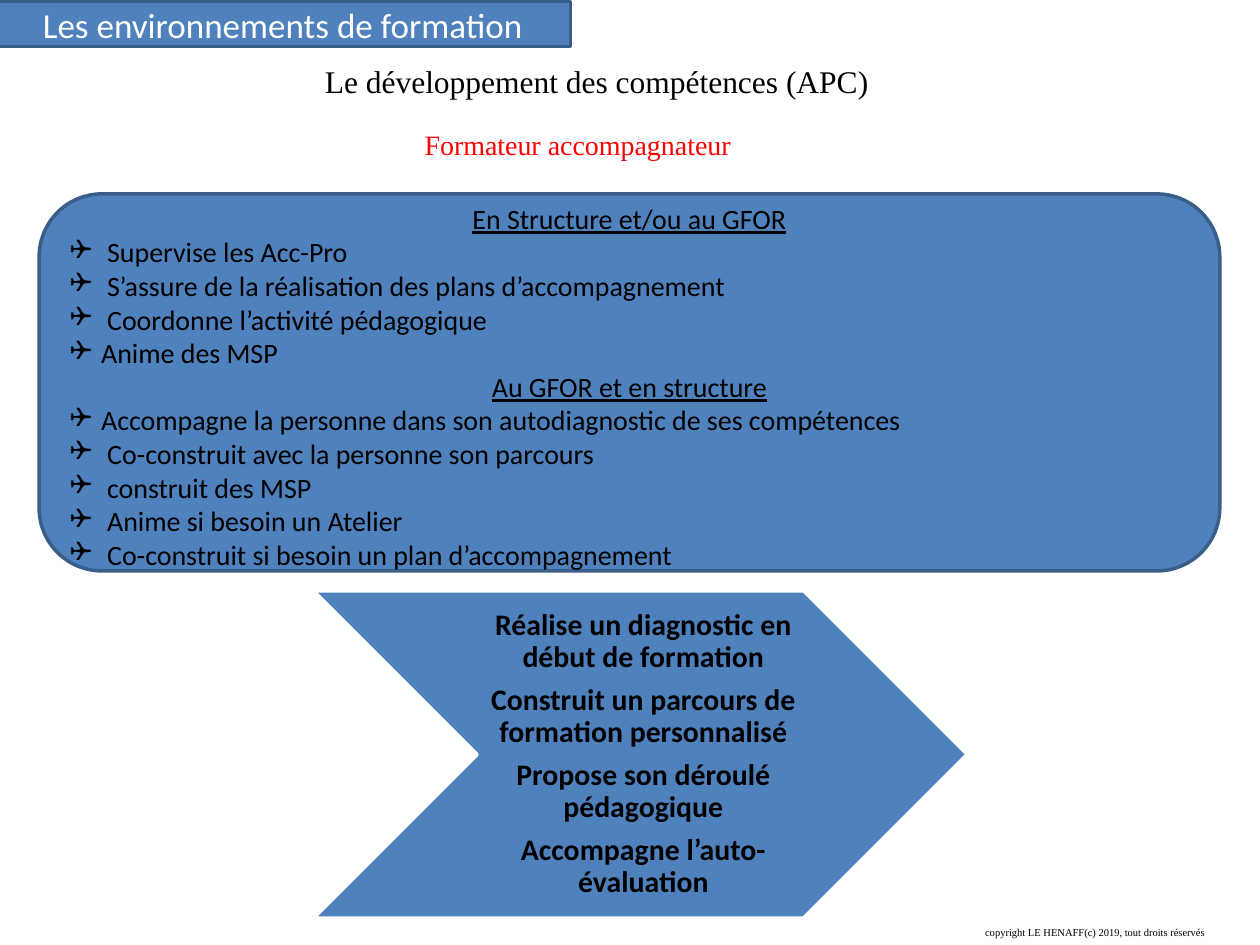
from dataclasses import dataclass

from lxml import etree
from pptx import Presentation
from pptx.dml.color import RGBColor
from pptx.enum.shapes import MSO_SHAPE
from pptx.enum.text import MSO_ANCHOR, PP_ALIGN
from pptx.oxml.ns import qn
from pptx.util import Cm, Pt

RECTANGLE = MSO_SHAPE.RECTANGLE
ROUNDED = MSO_SHAPE.ROUNDED_RECTANGLE
CHEVRON = MSO_SHAPE.CHEVRON
LEFT, CENTER = PP_ALIGN.LEFT, PP_ALIGN.CENTER
TOP, MIDDLE = MSO_ANCHOR.TOP, MSO_ANCHOR.MIDDLE

ROLE_SECTIONS = [
    ("En Structure et/ou au GFOR", [
        ("Supervise les Acc-Pro", 0.75),
        ("S’assure de la réalisation des plans d’accompagnement", 0.75),
        ("Coordonne l’activité pédagogique", 0.75),
        ("Anime des MSP", 0.63),
    ]),
    ("Au GFOR et en structure", [
        ("Accompagne la personne dans son autodiagnostic de ses compétences", 0.63),
        ("Co-construit avec la personne son parcours", 0.75),
        ("construit des MSP", 0.75),
        ("Anime si besoin un Atelier", 0.75),
        ("Co-construit si besoin un plan d’accompagnement", 0.75),
    ]),
]
STEPS = [
    "Réalise un diagnostic en début de formation",
    "Construit un parcours de formation personnalisé",
    "Propose son déroulé pédagogique",
    "Accompagne l’auto-évaluation",
]


@dataclass(frozen=True)
class Theme:
    sans: str = "Calibri"
    serif: str = "Times New Roman"
    blue: RGBColor = RGBColor(0x4F, 0x81, 0xBD)
    edge: RGBColor = RGBColor(0x39, 0x5E, 0x89)
    white: RGBColor = RGBColor(0xFF, 0xFF, 0xFF)
    black: RGBColor = RGBColor(0, 0, 0)
    red: RGBColor = RGBColor(0xFF, 0, 0)
    banner: Pt = Pt(20)
    heading: Pt = Pt(18)
    step: Pt = Pt(17)
    body: Pt = Pt(16)
    footer: Pt = Pt(6)
    line: Pt = Pt(2)


class PageBuilder:
    """Draws the elements of one page in the style of a theme."""

    def __init__(self, page, theme):
        self.page = page
        self.theme = theme

    def panel(self, kind, place, edge):
        box = self.page.shapes.add_shape(kind, *map(Cm, place))
        box.shadow.inherit = False
        box.fill.solid()
        box.fill.fore_color.rgb = self.theme.blue
        box.line.color.rgb = edge
        box.line.width = self.theme.line
        return box

    def frame(self, box, lines, anchor, margins=(0.25, 0.13, 0.25, 0.13)):
        frame = box.text_frame
        frame.word_wrap = True
        frame.vertical_anchor = anchor
        (frame.margin_left, frame.margin_top,
         frame.margin_right, frame.margin_bottom) = map(Cm, margins)
        frame.text = "\n".join(lines)
        return frame.paragraphs

    def style(self, para, size, color, font, align=LEFT, bold=False, underline=False):
        para.alignment = align
        for span in para.runs:
            span.font.name = font
            span.font.size = size
            span.font.color.rgb = color
            span.font.bold = bold
            span.font.underline = underline

    def bullet(self, para, indent):
        props = para._p.get_or_add_pPr()
        props.set("marL", str(Cm(indent)))
        props.set("indent", str(-Cm(indent)))
        color = etree.SubElement(props, qn("a:buClr"))
        etree.SubElement(color, qn("a:srgbClr"), val=str(self.theme.black))
        etree.SubElement(props, qn("a:buFont"), typeface="Wingdings")
        etree.SubElement(props, qn("a:buChar"), char="❑")

    def banner(self, text, place):
        box = self.panel(RECTANGLE, place, self.theme.edge)
        para = self.frame(box, [text], MIDDLE)[0]
        self.style(para, self.theme.banner, self.theme.white, self.theme.sans, CENTER)

    def label(self, text, place, size, color):
        box = self.page.shapes.add_textbox(*map(Cm, place))
        para = self.frame(box, [text], TOP)[0]
        self.style(para, size, color, self.theme.serif)

    def role_card(self, sections, place):
        theme = self.theme
        box = self.panel(ROUNDED, place, theme.edge)
        rows = [row for title, duties in sections for row in [(title, None), *duties]]
        paras = self.frame(box, [text for text, _ in rows], MIDDLE, (0.25, 0.15, 0.25, 0))
        for para, (_, indent) in zip(paras, rows):
            is_title = indent is None
            self.style(para, theme.body, theme.black, theme.sans,
                       CENTER if is_title else LEFT, underline=is_title)
            if not is_title:
                self.bullet(para, indent)

    def step_arrow(self, steps, place):
        theme = self.theme
        left, top, width, height = place
        self.panel(CHEVRON, place, theme.white)
        inner = (left + height / 2, top, width - height, height)
        box = self.page.shapes.add_textbox(*map(Cm, inner))
        for index, para in enumerate(self.frame(box, steps, MIDDLE, (0.18, 0.06, 0.06, 0.06))):
            self.style(para, theme.step, theme.black, theme.sans, CENTER, bold=True)
            para.line_spacing = 0.9
            para.space_before = Pt(6 if index else 0)


def main():
    deck = Presentation()
    deck.slide_width, deck.slide_height = Cm(25.4), Cm(19.05)
    theme = Theme()
    builder = PageBuilder(deck.slides.add_slide(deck.slide_layouts[6]), theme)
    builder.step_arrow(STEPS, (6.32, 11.91, 13.18, 6.6))
    builder.banner("Les environnements de formation", (-0.1, 0.03, 11.6, 0.91))
    builder.label("copyright LE HENAFF(c) 2019, tout droits réservés",
                  (19.61, 18.54, 5.79, 0.51), theme.footer, theme.black)
    builder.label("Le développement des compétences (APC)",
                  (6.3, 1.12, 12.2, 1.02), theme.heading, theme.black)
    builder.label("Formateur accompagnateur",
                  (8.31, 2.44, 7.8, 0.94), theme.body, theme.red)
    builder.role_card(ROLE_SECTIONS, (0.79, 3.91, 23.8, 7.6))
    deck.save("out.pptx")


if __name__ == "__main__":
    main()
